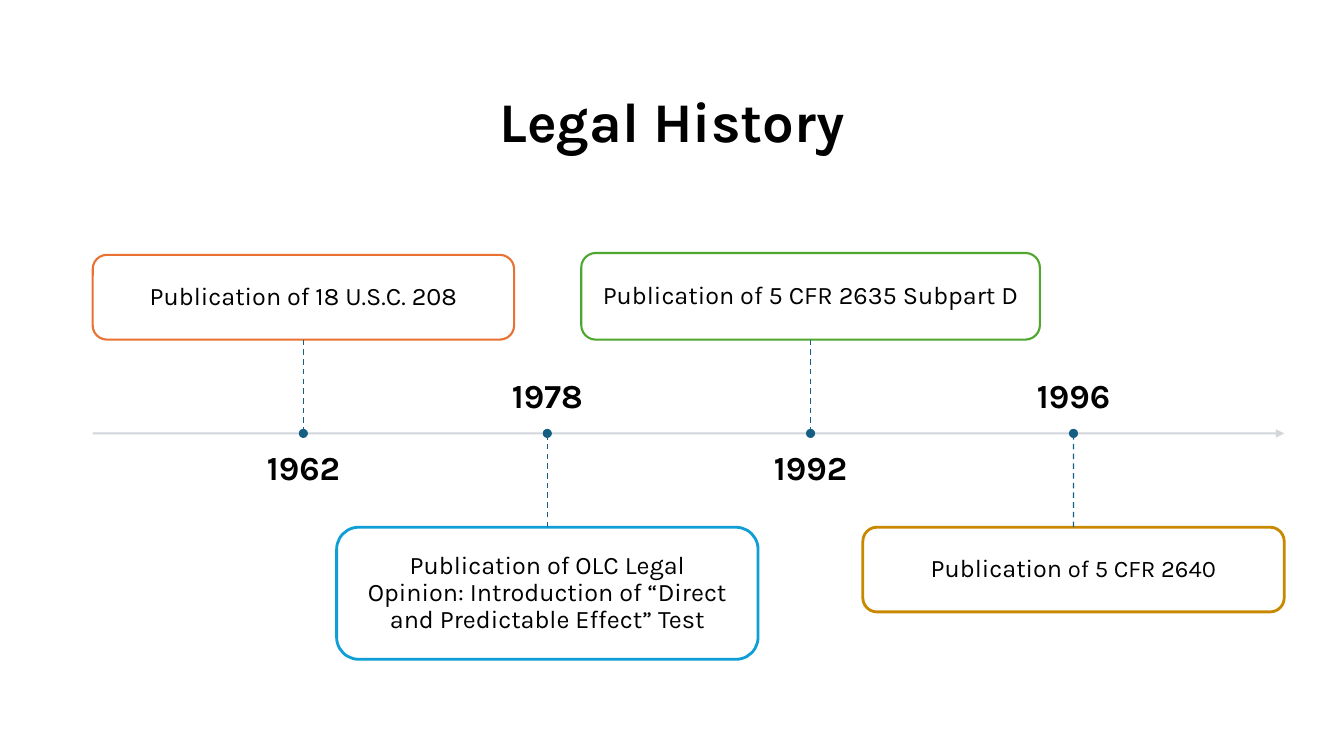
"""Build the Legal History timeline slide."""
from dataclasses import dataclass

from lxml import etree
from pptx import Presentation
from pptx.dml.color import RGBColor
from pptx.enum import dml, shapes, text
from pptx.oxml import ns
from pptx.util import Pt

BLACK = RGBColor(0x00, 0x00, 0x00)
WHITE = RGBColor(0xFF, 0xFF, 0xFF)
GREY = RGBColor(0xCC, 0xD2, 0xD8)
TEAL = RGBColor(0x15, 0x60, 0x82)
ORANGE = RGBColor(0xE9, 0x71, 0x32)
BLUE = RGBColor(0x0F, 0x9E, 0xD5)
GREEN = RGBColor(0x4E, 0xA7, 0x2E)
GOLD = RGBColor(0xC8, 0x88, 0x00)

FONT = "Karla"
AXIS_LEFT, AXIS_RIGHT, AXIS_Y = 66.24, 917.28, 309.6
STEM = 67
YEAR_GAP, YEAR_W, YEAR_H = 13, 265, 39.6
DOT = 5


@dataclass(frozen=True)
class Run:
    text: str
    size: float = 18
    bold: bool = False


@dataclass(frozen=True)
class Event:
    year: str
    runs: tuple[Run, ...]
    x: float
    width: float
    height: float
    above: bool
    color: RGBColor
    weight: float
    opacity: int = 100


EVENTS = (
    Event("1962", (Run("Publication of 18 U.S.C. 208"),),
          216.72, 301, 60.5, True, ORANGE, 1.5),
    Event("1978", (Run("Publication of OLC Legal Opinion: Introduction of "
                       "“Direct and Predictable Effect” Test"),),
          390.96, 301, 94.3, False, BLUE, 2),
    Event("1992", (Run("Publication of 5 CFR 2635 Subpart D"),),
          579, 327.6, 61.9, True, GREEN, 1.5),
    Event("1996", (Run("Publication"), Run(" of 5 CFR 2640", 17)),
          766.8, 301, 60.5, False, GOLD, 2, 90),
)


def write(sp, runs: tuple[Run, ...], anchor, inset: float | None = None) -> None:
    tf = sp.text_frame
    tf.word_wrap = True
    tf.vertical_anchor = anchor
    if inset is not None:
        tf.margin_left = tf.margin_right = Pt(inset)
        tf.margin_top = tf.margin_bottom = Pt(inset)
    p = tf.paragraphs[0]
    p.alignment = text.PP_ALIGN.CENTER
    p.line_spacing = 0.9
    for run in runs:
        r = p.add_run()
        r.text = run.text
        r.font.name = FONT
        r.font.size = Pt(run.size)
        r.font.bold = run.bold
        r.font.color.rgb = BLACK


def set_opacity(fill_parent, percent: int) -> None:
    color = fill_parent.find(ns.qn("a:solidFill")).find(ns.qn("a:srgbClr"))
    etree.SubElement(color, ns.qn("a:alpha"), val=str(percent * 1000))


def add_shape(s, kind, left: float, top: float, width: float, height: float,
              fill: RGBColor, line: RGBColor, weight: float):
    sp = s.shapes.add_shape(kind, Pt(left), Pt(top), Pt(width), Pt(height))
    sp.shadow.inherit = False
    sp.fill.solid()
    sp.fill.fore_color.rgb = fill
    sp.line.color.rgb = line
    sp.line.width = Pt(weight)
    return sp


def add_line(s, x1: float, y1: float, x2: float, y2: float,
             color: RGBColor, weight: float):
    line = s.shapes.add_connector(shapes.MSO_CONNECTOR.STRAIGHT,
                                  Pt(x1), Pt(y1), Pt(x2), Pt(y2))
    line.line.color.rgb = color
    line.line.width = Pt(weight)
    etree.SubElement(line._element.spPr, ns.qn("a:effectLst"))
    return line


def add_axis(s) -> None:
    axis = add_line(s, AXIS_LEFT, AXIS_Y, AXIS_RIGHT, AXIS_Y, GREY, 1.5)
    ln = axis.line._get_or_add_ln()
    set_opacity(ln, 90)
    etree.SubElement(ln, ns.qn("a:tailEnd"), type="triangle")


def add_event(s, event: Event) -> None:
    side = -1 if event.above else 1
    box_edge = AXIS_Y + side * STEM
    box_top = box_edge - event.height if event.above else box_edge
    box = add_shape(s, shapes.MSO_SHAPE.ROUNDED_RECTANGLE,
                    event.x - event.width / 2, box_top, event.width, event.height,
                    WHITE, event.color, event.weight)
    if event.opacity < 100:
        set_opacity(box._element.spPr, event.opacity)
    write(box, event.runs, text.MSO_ANCHOR.MIDDLE, 12)

    stem = add_line(s, event.x, box_edge, event.x, AXIS_Y, TEAL, 1)
    stem.line.dash_style = dml.MSO_LINE.DASH
    stem.begin_connect(box, 2 if event.above else 0)
    add_shape(s, shapes.MSO_SHAPE.OVAL, event.x - DOT / 2, AXIS_Y - DOT / 2,
              DOT, DOT, TEAL, TEAL, 1.5)

    year_top = AXIS_Y + YEAR_GAP if event.above else AXIS_Y - YEAR_GAP - YEAR_H
    year = s.shapes.add_textbox(Pt(event.x - YEAR_W / 2), Pt(year_top),
                                Pt(YEAR_W), Pt(YEAR_H))
    anchor = text.MSO_ANCHOR.TOP if event.above else text.MSO_ANCHOR.BOTTOM
    write(year, (Run(event.year, 24, True),), anchor, 0)


def main() -> None:
    prs = Presentation()
    prs.slide_width, prs.slide_height = Pt(960), Pt(540)
    s = prs.slides.add_slide(prs.slide_layouts[5])
    title = s.shapes.title
    title.left, title.top, title.width, title.height = Pt(66), Pt(44), Pt(828), Pt(89)
    write(title, (Run("Legal History", 40, True),), text.MSO_ANCHOR.MIDDLE)
    add_axis(s)
    for event in EVENTS:
        add_event(s, event)
    prs.save("out.pptx")


if __name__ == "__main__":
    main()
